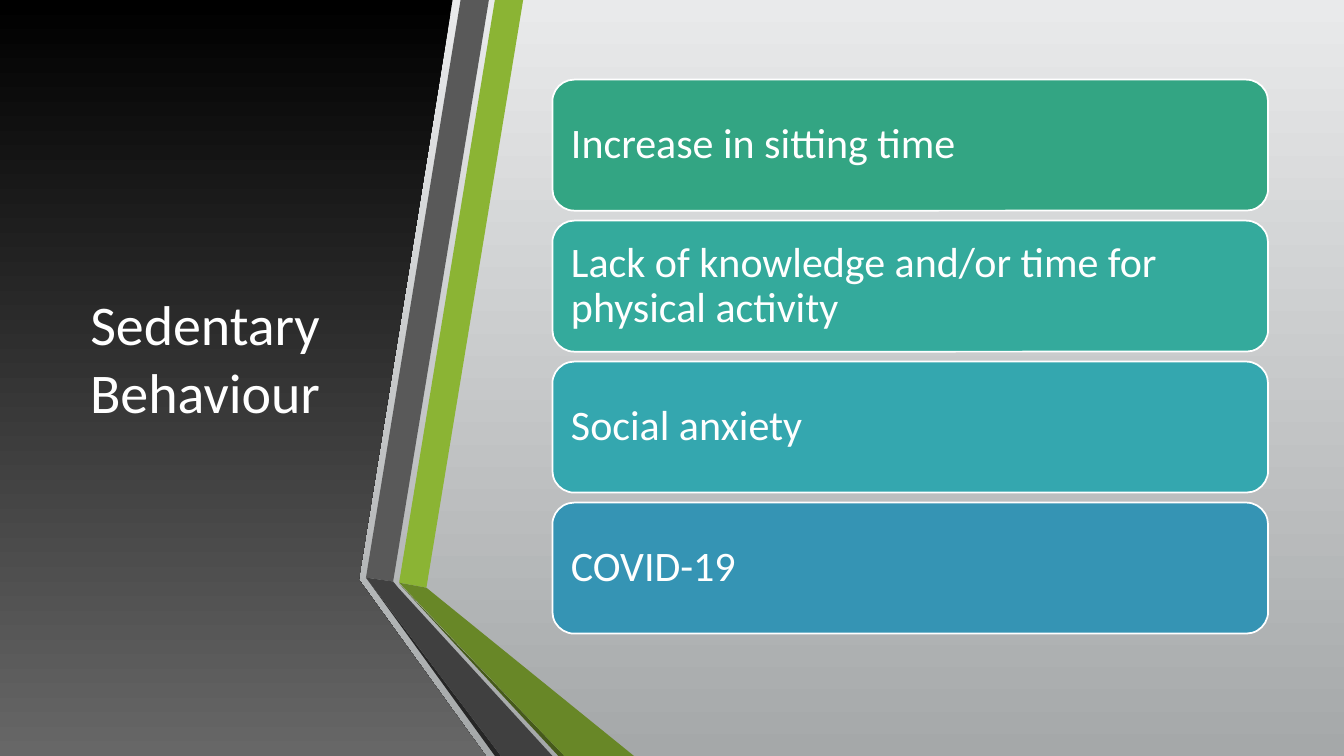
from dataclasses import dataclass

from pptx import Presentation
from pptx.dml.color import RGBColor
from pptx.dml.fill import FillFormat
from pptx.enum.shapes import MSO_SHAPE
from pptx.enum.text import MSO_ANCHOR, PP_ALIGN
from pptx.shapes.autoshape import Shape
from pptx.slide import Slide
from pptx.text.text import Font
from pptx.util import Pt

FONT = "Calibri"
WHITE = "FFFFFF"
WIDTH, HEIGHT = 960, 540

Points = list[tuple[float, float]]


@dataclass
class Ribbon:
    color: str
    points: Points


@dataclass
class Card:
    text: str
    color: str


PANEL: Points = [(0, 0), (323.3, 0), (256.3, 414), (347, HEIGHT), (0, HEIGHT)]

RIBBONS = [
    Ribbon("8BB434", [(285.1, 416.2), (304.6, 419.8), (373.7, 0), (353.5, 0)]),
    Ribbon("595959", [(349.2, 0), (329, 0), (261.4, 412.6), (280.8, 415.4)]),
    Ribbon("262626", [(261.4, 412.6), (353.5, HEIGHT), (357.8, HEIGHT)]),
    Ribbon("465A1A", [(285.1, 416.9), (398.9, HEIGHT), (403.2, HEIGHT)]),
    Ribbon("688727", [(285.1, 416.2), (403.2, HEIGHT), (452.9, HEIGHT), (304.6, 419.8)]),
    Ribbon("404040", [(394.6, HEIGHT), (284.4, 419.8), (280.8, 415.4),
                      (261.4, 412.6), (357.8, HEIGHT)]),
]

CARDS = [
    Card("Increase in sitting time", "33A583"),
    Card("Lack of knowledge and/or time for physical activity", "34AA9C"),
    Card("Social anxiety", "34A7AF"),
    Card("COVID-19", "3594B4"),
]
CARD_LEFT, CARD_TOP = 394.6, 56.9
CARD_WIDTH, CARD_HEIGHT = 511.2, 93.6
CARD_PITCH = 100.7
CARD_INSET = 8.7


def rgb(color: str) -> RGBColor:
    return RGBColor.from_string(color)


def fill_solid(fill: FillFormat, color: str) -> None:
    fill.solid()
    fill.fore_color.rgb = rgb(color)


def fill_vertical(fill: FillFormat, top: str, bottom: str) -> None:
    fill.gradient()
    fill.gradient_angle = 270
    for stop, color in zip(fill.gradient_stops, (top, bottom)):
        stop.color.rgb = rgb(color)


def set_font(font: Font, size: float) -> None:
    font.name = FONT
    font.size = Pt(size)
    font.color.rgb = rgb(WHITE)


def add_polygon(slide: Slide, points: Points) -> Shape:
    """Draw a closed outline without line or shadow."""
    start, *rest = [(Pt(x), Pt(y)) for x, y in points]
    builder = slide.shapes.build_freeform(*start)
    builder.add_line_segments(rest, close=True)
    sp = builder.convert_to_shape()
    sp.shadow.inherit = False
    sp.line.fill.background()
    return sp


def add_card(slide: Slide, card: Card, top: float) -> None:
    sp = slide.shapes.add_shape(MSO_SHAPE.ROUNDED_RECTANGLE, Pt(CARD_LEFT), Pt(top),
                                Pt(CARD_WIDTH), Pt(CARD_HEIGHT))
    sp.shadow.inherit = False
    fill_solid(sp.fill, card.color)
    sp.line.color.rgb = rgb(WHITE)
    sp.line.width = Pt(1.25)
    tf = sp.text_frame
    tf.word_wrap = True
    tf.vertical_anchor = MSO_ANCHOR.MIDDLE
    tf.margin_left = tf.margin_right = Pt(CARD_INSET)
    tf.margin_top = tf.margin_bottom = Pt(CARD_INSET)
    p = tf.paragraphs[0]
    p.text = card.text
    p.alignment = PP_ALIGN.LEFT
    p.line_spacing = 0.9
    set_font(p.font, 30)


def set_title(slide: Slide, text: str) -> None:
    title = slide.shapes.title
    title.left, title.top = Pt(42.5), Pt(54)
    title.width, title.height = Pt(208), Pt(402)
    tf = title.text_frame
    tf.word_wrap = True
    tf.vertical_anchor = MSO_ANCHOR.MIDDLE
    p = tf.paragraphs[0]
    p.text = text
    p.alignment = PP_ALIGN.CENTER
    set_font(p.font, 40)


def main() -> None:
    prs = Presentation()
    prs.slide_width, prs.slide_height = Pt(WIDTH), Pt(HEIGHT)
    slide = prs.slides.add_slide(prs.slide_layouts[5])
    fill_vertical(slide.background.fill, "E9EAEB", "A5A8A9")
    set_title(slide, "Sedentary Behaviour")

    panel = add_polygon(slide, PANEL)
    fill_vertical(panel.fill, "000000", "676767")
    # The title must lie in front of the dark panel.
    slide.shapes.title.element.addprevious(panel.element)

    for ribbon in RIBBONS:
        fill_solid(add_polygon(slide, ribbon.points).fill, ribbon.color)
    for i, card in enumerate(CARDS):
        add_card(slide, card, CARD_TOP + i * CARD_PITCH)
    prs.save("out.pptx")


if __name__ == "__main__":
    main()
